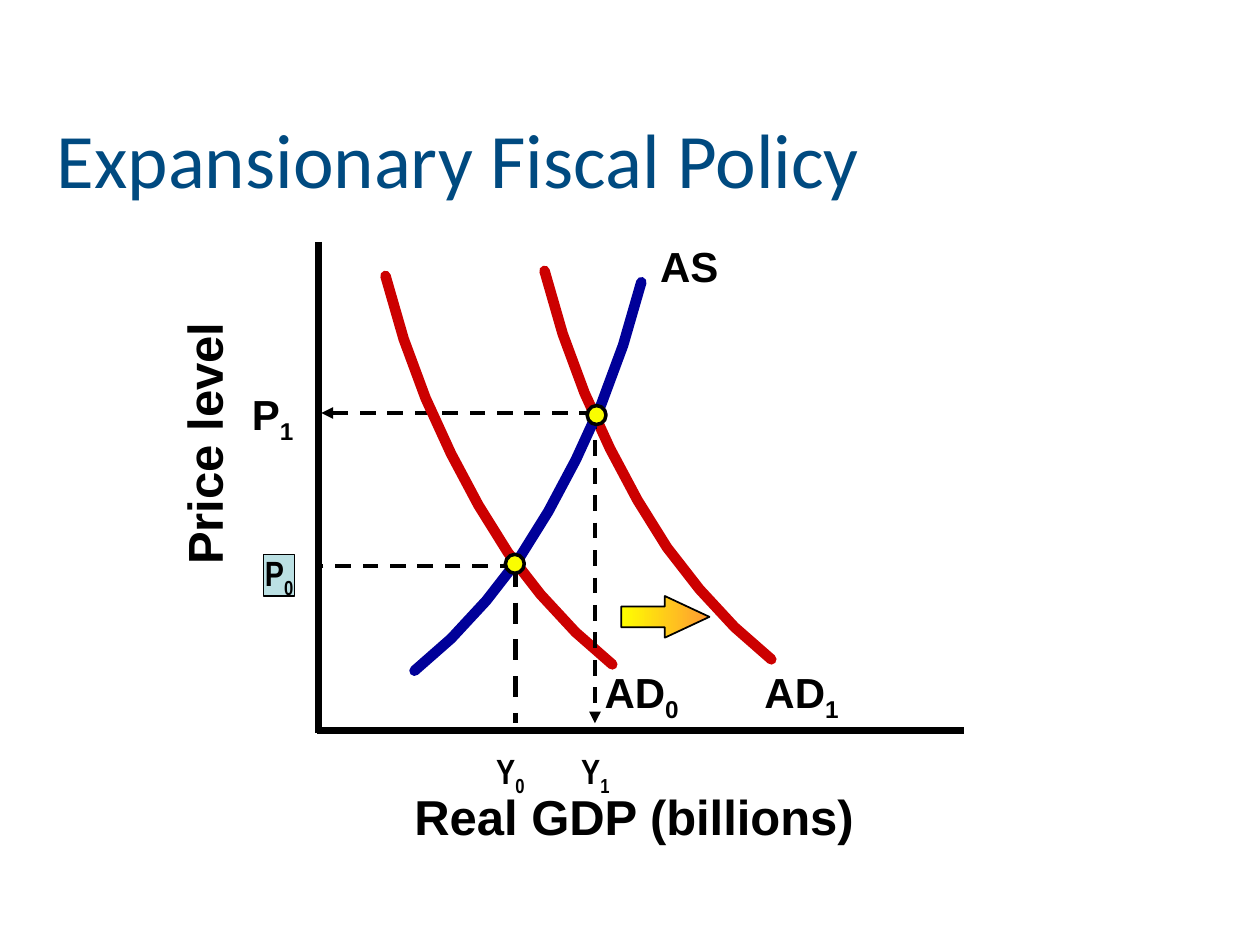
from lxml import etree
from pptx import Presentation
from pptx.dml.color import RGBColor
from pptx.enum.dml import MSO_LINE
from pptx.enum.shapes import MSO_CONNECTOR, MSO_SHAPE
from pptx.enum.text import MSO_ANCHOR, PP_ALIGN
from pptx.oxml.ns import qn
from pptx.util import Pt

DASH = MSO_LINE.DASH
STRAIGHT = MSO_CONNECTOR.STRAIGHT
TITLE_ONLY = 5

COLORS = {
    "ink": "000000", "title": "004A80", "demand": "CC0000", "supply": "000099",
    "dot": "FAFD00", "box": "BBE0E3", "arrow_from": "FFFF00", "arrow_to": "FF9933",
}
LABEL = {"name": "Arial", "size": Pt(24), "bold": True}
AXIS_TITLE = {"name": "Arial", "size": Pt(28), "bold": True}
NARROW = {"name": "Arial Narrow", "size": Pt(20), "bold": True}

TITLE = "Expansionary Fiscal Policy"
# Text runs (a leading "_" makes a subscript), box, font, rotation
LABELS = [
    (["Price level"], (39.6, 233.3, 152.6, 40.3), AXIS_TITLE, 270),
    (["Real GDP (billions)"], (229.7, 445.7, 266.4, 40.3), AXIS_TITLE, 0),
    (["AD", "_0"], (338.4, 377.3, 57.6, 36), LABEL, 0),
    (["AD", "_1"], (429.8, 377.3, 57.6, 36), LABEL, 0),
    (["P", "_1"], (136.8, 218.2, 38.9, 36), LABEL, 0),
    (["AS"], (370.1, 133.9, 47.5, 36), LABEL, 0),
]
OUTPUT_LABELS = ["Y", "_0", "\t", "Y", "_1"]
OUTPUT_BOX = (276.5, 424.8, 144, 31)
OUTPUT_TAB = 48.5

# All three curves are this one; supply runs it towards the left
CURVE = [(0, 0), (10.4, 36), (22.9, 69.8), (37.4, 101.5), (53.1, 131),
         (70, 158.1), (88.6, 182), (108.6, 203.6), (129.6, 222)]
AD0, AD1, AS = (220.3, 157.7, 1), (311.2, 154.8, 1), (366.5, 161.3, -1)

AXES = [((182.2, 138.2), (182.2, 419)), ((181.4, 417.6), (550.8, 417.6))]
AXIS_BOTTOM = 413.3
EQ0, EQ1 = (294.5, 323.3), (340, 236)
DOT_CENTERS = [(294.2, 322.2), (340.9, 237.2)]
DOT = 10.8


def rgb(name):
    return RGBColor.from_string(COLORS[name])


def outline(shape, color, width):
    shape.line.color.rgb = rgb(color)
    shape.line.width = Pt(width)


def add_line(s, start, end, width, dashed=False, arrow=False):
    line = s.shapes.add_connector(STRAIGHT, *map(Pt, start + end))
    outline(line, "ink", width)
    if dashed:
        line.line.dash_style = DASH
    if arrow:
        etree.SubElement(line.line._get_or_add_ln(), qn("a:tailEnd"), type="triangle")
    etree.SubElement(line._element.spPr, qn("a:effectLst"))


def add_curve(s, placement, color):
    x, y, direction = placement
    points = [(Pt(x + direction * dx), Pt(y + dy)) for dx, dy in CURVE]
    builder = s.shapes.build_freeform(*points[0], scale=1.0)
    builder.add_line_segments(points[1:], close=False)
    curve = builder.convert_to_shape()
    curve.shadow.inherit = False
    curve.fill.background()
    outline(curve, color, 6)
    curve.line._get_or_add_ln().set("cap", "rnd")


def add_preset(s, kind, box, width):
    shape = s.shapes.add_shape(kind, *map(Pt, box))
    shape.shadow.inherit = False
    outline(shape, "ink", width)
    return shape


def add_solid(s, kind, box, color, width):
    shape = add_preset(s, kind, box, width)
    shape.fill.solid()
    shape.fill.fore_color.rgb = rgb(color)
    return shape


def write_runs(p, texts, font, color="ink"):
    for text in texts:
        r = p.add_run()
        r.text = text.lstrip("_")
        for key, value in font.items():
            setattr(r.font, key, value)
        r.font.color.rgb = rgb(color)
        if text.startswith("_"):
            r.font._element.set("baseline", "-25000")


def add_label(s, texts, box, font, rotation=0):
    label = s.shapes.add_textbox(*map(Pt, box))
    label.rotation = rotation
    label.text_frame.word_wrap = False
    p = label.text_frame.paragraphs[0]
    write_runs(p, texts, font)
    return p


def add_title(s):
    title = s.shapes.title
    title.left, title.top, title.width, title.height = map(Pt, (25.2, 56.9, 680.4, 59.8))
    tf = title.text_frame
    tf.vertical_anchor = MSO_ANCHOR.BOTTOM
    tf.margin_bottom = 0
    p = tf.paragraphs[0]
    p.alignment = PP_ALIGN.LEFT
    write_runs(p, [TITLE], {"name": "Calibri", "size": Pt(44)}, "title")


def add_shift_arrow(s):
    arrow = add_preset(s, MSO_SHAPE.RIGHT_ARROW, (355, 340.6, 50.4, 23.8), 1)
    arrow.adjustments[0], arrow.adjustments[1] = 0.5, 1.07
    arrow.fill.gradient()
    arrow.fill.gradient_angle = 0
    for stop, position, color in zip(arrow.fill.gradient_stops, (0, 1),
                                     ("arrow_from", "arrow_to")):
        stop.position = position
        stop.color.rgb = rgb(color)


def add_price_box(s):
    box = add_solid(s, MSO_SHAPE.RECTANGLE, (150.5, 316.8, 18, 23.8), "box", 0.75)
    tf = box.text_frame
    tf.word_wrap = False
    tf.vertical_anchor = MSO_ANCHOR.MIDDLE
    p = tf.paragraphs[0]
    p.alignment = PP_ALIGN.CENTER
    write_runs(p, ["P", "_0"], NARROW)


def main():
    prs = Presentation()
    prs.slide_width, prs.slide_height = Pt(720), Pt(540)
    s = prs.slides.add_slide(prs.slide_layouts[TITLE_ONLY])
    add_title(s)

    add_line(s, EQ1, (183.6, EQ1[1]), 2.25, dashed=True, arrow=True)
    for start, end in AXES:
        add_line(s, start, end, 4)
    add_curve(s, AD0, "demand")
    add_curve(s, AD1, "demand")
    add_shift_arrow(s)
    add_line(s, EQ1, (EQ1[0], AXIS_BOTTOM), 2.25, dashed=True, arrow=True)
    add_curve(s, AS, "supply")
    add_line(s, EQ0, (EQ0[0], AXIS_BOTTOM), 3, dashed=True)
    add_line(s, EQ0, (180.7, EQ0[1]), 2.25, dashed=True)
    for x, y in DOT_CENTERS:
        add_solid(s, MSO_SHAPE.OVAL, (x - DOT / 2, y - DOT / 2, DOT, DOT), "dot", 2)

    for label in LABELS:
        add_label(s, *label)
    add_price_box(s)
    p = add_label(s, OUTPUT_LABELS, OUTPUT_BOX, NARROW)
    tabs = etree.SubElement(p._p.get_or_add_pPr(), qn("a:tabLst"))
    etree.SubElement(tabs, qn("a:tab"), pos=str(Pt(OUTPUT_TAB)), algn="l")

    prs.save("out.pptx")


if __name__ == "__main__":
    main()
